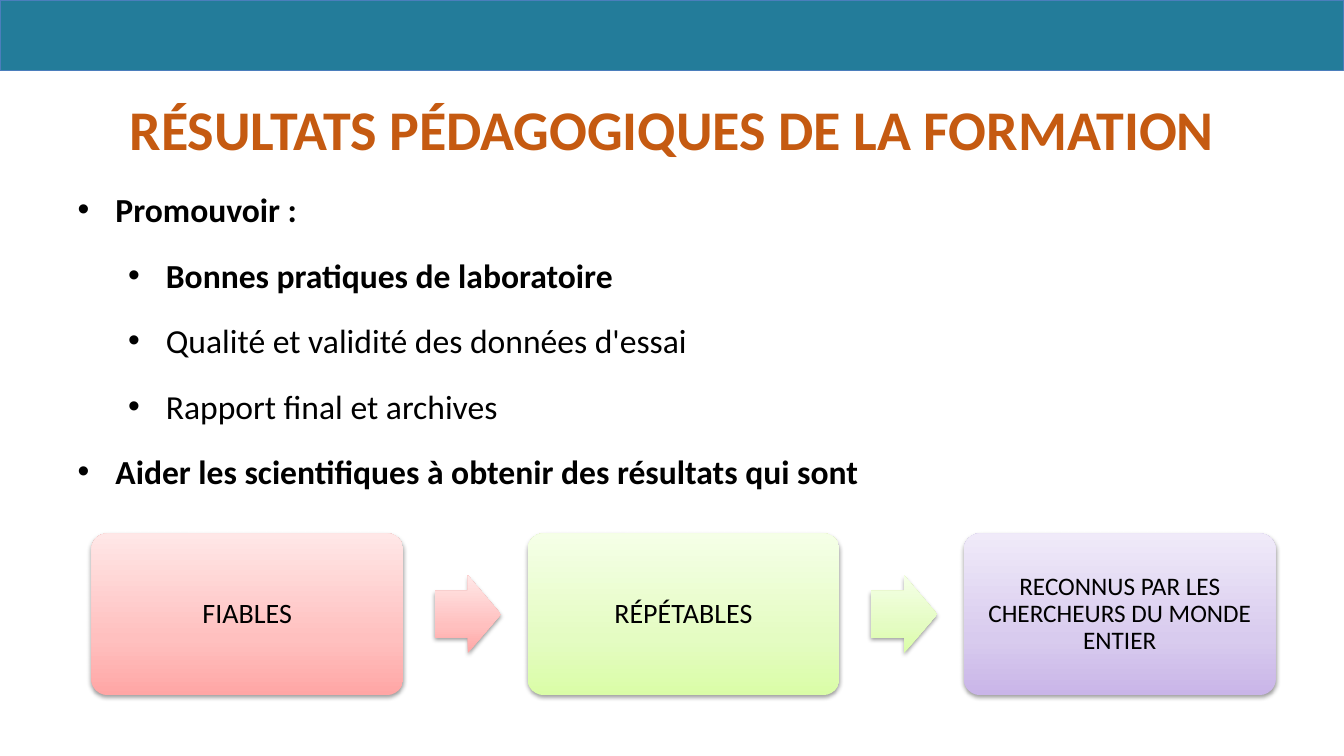
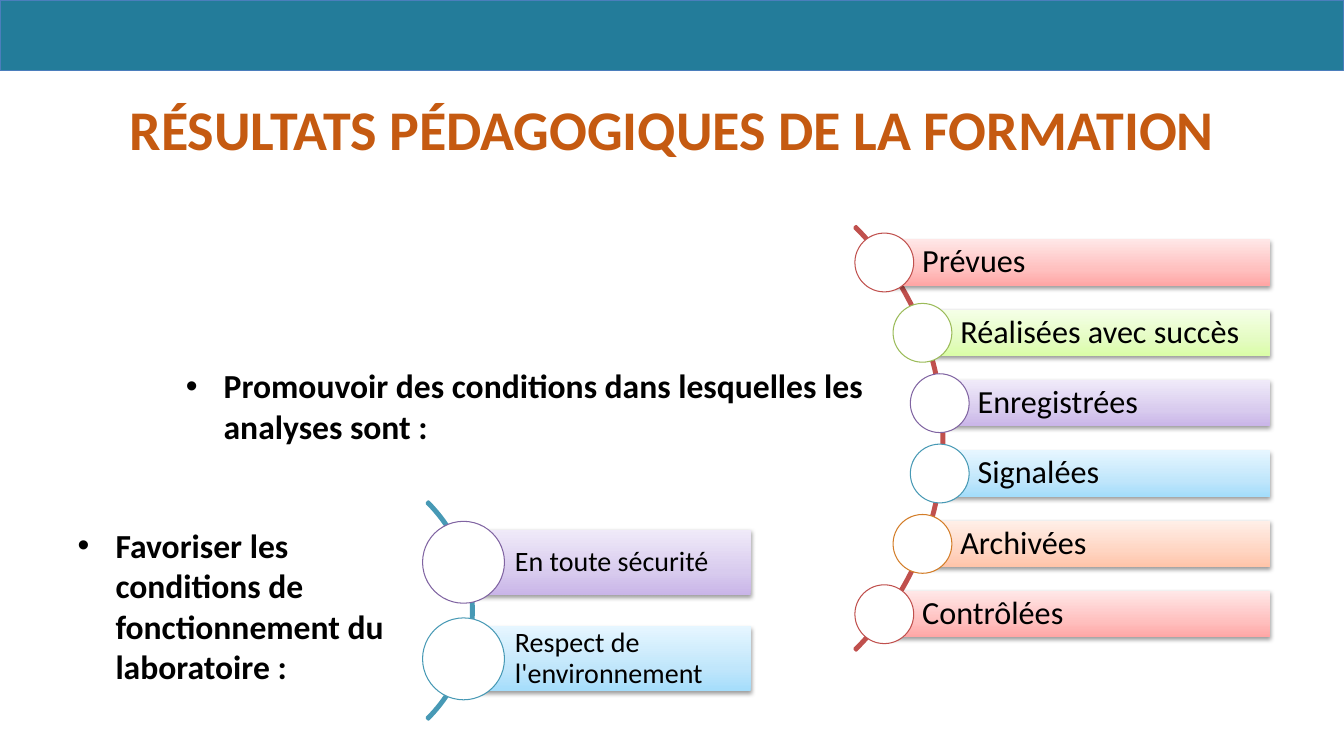
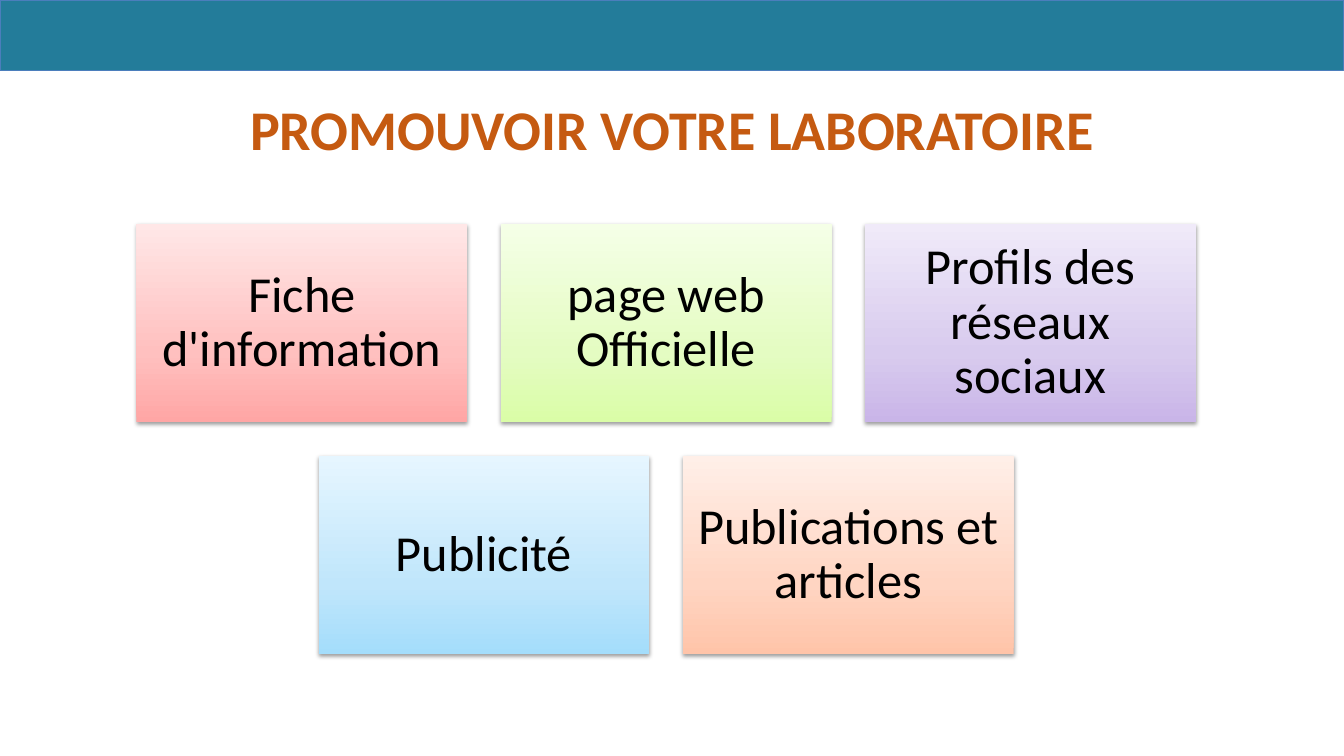
import copy
import math
from dataclasses import dataclass

from lxml import etree
from pptx import Presentation
from pptx import util as u
from pptx.dml.color import RGBColor
from pptx.enum import shapes, text
from pptx.oxml.ns import qn

PX = 9525  # EMU in one px
SHAPE = shapes.MSO_SHAPE
ALIGN = text.PP_ALIGN
ANCHOR = text.MSO_ANCHOR


@dataclass(frozen=True)
class Tone:
    line: str
    gradient: tuple  # colours from bottom to top


@dataclass(frozen=True)
class Theme:
    font: str = "Calibri"
    ink: str = "000000"
    paper: str = "FFFFFF"
    title: str = "C55A11"
    band: str = "237C9A"
    band_line: str = "4B7EBC"
    red: Tone = Tone("C0504D", ("FFA6A5", "FFC0BF", "FFE7E7"))
    green: Tone = Tone("9BBB59", ("DAFDA7", "E4FCC2", "F5FFE7"))
    purple: Tone = Tone("8064A2", ("C9B5E8", "D8CBEE", "F0EAF9"))
    blue: Tone = Tone("4799B5", ("A4DDFB", "C0E6FB", "E6F6FF"))
    orange: Tone = Tone("D37D28", ("FFC4A9", "FFD5C2", "FFEFE8"))
    gradient_stops: tuple = (0, 0.35, 1)
    title_size: int = 40
    body_size: int = 24
    card_size: int = 20
    small_card_size: int = 18
    condition_size: int = 23
    tile_size: int = 36
    thin_line: float = 0.75
    arc_line: int = 2


THEME = Theme()


def px(value):
    return u.Emu(round(value * PX))


def rgb(colour):
    return RGBColor.from_string(colour)


# Basic parts

def set_frame(frame, insets, anchor=ANCHOR.TOP):
    frame.word_wrap = True
    frame.vertical_anchor = anchor
    (frame.margin_left, frame.margin_top,
     frame.margin_right, frame.margin_bottom) = map(px, insets)


def set_font(paragraph, size, colour=THEME.ink, bold=False):
    font = paragraph.font
    font.name, font.size, font.bold = THEME.font, u.Pt(size), bold
    font.color.rgb = rgb(colour)


def add_plain(slide, kind, box, fill=None, line=None, width=THEME.thin_line):
    shape = slide.shapes.add_shape(kind, *map(px, box))
    shape.shadow.inherit = False
    if fill:
        shape.fill.solid()
        shape.fill.fore_color.rgb = rgb(fill)
    else:
        shape.fill.background()
    if line:
        shape.line.color.rgb = rgb(line)
        shape.line.width = u.Pt(width)
    else:
        shape.line.fill.background()
    return shape


def add_shaded(slide, kind, box, tone):
    """Borderless shape with a vertical gradient and a soft shadow."""
    shape = add_plain(slide, kind, box)
    fill = shape.fill
    fill.gradient()
    fill.gradient_angle = 90
    properties = shape.element.spPr
    stops = properties.find(".//" + qn("a:gsLst"))
    stops.append(copy.deepcopy(stops[0]))
    for stop, position, colour in zip(fill.gradient_stops, THEME.gradient_stops, tone.gradient):
        stop.position = position
        stop.color.rgb = rgb(colour)
    shadow = etree.SubElement(properties.find(qn("a:effectLst")), qn("a:outerShdw"),
                              blurRad="40000", dist="20000", dir="5400000", rotWithShape="0")
    colour = etree.SubElement(shadow, qn("a:srgbClr"), val="000000")
    etree.SubElement(colour, qn("a:alpha"), val="38000")
    return shape


def add_label(shape, label, size, insets, align=ALIGN.CENTER):
    set_frame(shape.text_frame, insets, ANCHOR.MIDDLE)
    paragraph = shape.text_frame.paragraphs[0]
    paragraph.text = label
    paragraph.alignment = align
    paragraph.line_spacing = 0.9
    set_font(paragraph, size)


def add_text_box(slide, box):
    frame = slide.shapes.add_textbox(*map(px, box)).text_frame
    set_frame(frame, (10, 5, 10, 0))
    return frame


# Regions

def add_titled_slide(presentation, title):
    slide = presentation.slides.add_slide(presentation.slide_layouts[6])
    add_plain(slide, SHAPE.RECTANGLE, (0, 0, 1280, 67), THEME.band, THEME.band_line)
    paragraph = add_text_box(slide, (64, 85, 1152, 62)).paragraphs[0]
    paragraph.text = title
    paragraph.alignment = ALIGN.CENTER
    set_font(paragraph, THEME.title_size, THEME.title, bold=True)
    return slide


def add_bullets(slide, box, items):
    """Items are (level, bold, wording)."""
    frame = add_text_box(slide, box)
    for index, (level, bold, wording) in enumerate(items):
        paragraph = frame.add_paragraph() if index else frame.paragraphs[0]
        paragraph.text = wording
        paragraph.level = level
        properties = paragraph._p.get_or_add_pPr()
        properties.set("marL", str(px(36 + 48 * level)))
        properties.set("indent", str(px(-36)))
        etree.SubElement(properties, qn("a:buFont"), typeface="Arial")
        etree.SubElement(properties, qn("a:buChar"), char="•")
        if index:
            paragraph.space_before = u.Pt(18)
        set_font(paragraph, THEME.body_size, bold=bold)


def add_flow(slide, box, cards):
    """Row of cards, each joined to the next by an arrow of its own tone."""
    left, top, width, height = box
    card_width, arrow_width, arrow_height, arrow_offset = 297, 63, 74, 30
    pitch = (width - card_width) / (len(cards) - 1)
    for index, (label, tone, size) in enumerate(cards):
        x = left + index * pitch
        card = add_shaded(slide, SHAPE.ROUNDED_RECTANGLE, (x, top, card_width, height), tone)
        card.adjustments[0] = 0.1
        add_label(card, label, size, (8, 8, 8, 8))
        if index < len(cards) - 1:
            arrow_box = (x + card_width + arrow_offset, top + (height - arrow_height) / 2,
                         arrow_width, arrow_height)
            arrow = add_shaded(slide, SHAPE.RIGHT_ARROW, arrow_box, tone)
            arrow.adjustments[0], arrow.adjustments[1] = 0.6, 0.5


def add_fan(slide, arc_box, right, rows, pitch, bar_height, circle, inset, size, arc_colour):
    """Bars that start on a quarter arc, with a circle at each start."""
    left, top, diameter = arc_box
    thickness = 2
    arc = add_plain(slide, SHAPE.BLOCK_ARC, (left, top, diameter, diameter),
                    line=arc_colour, width=THEME.arc_line)
    for index, value in enumerate((189, 27, thickness / diameter)):
        arc.adjustments[index] = value
    centre_x, centre_y = left + diameter / 2, top + diameter / 2
    radius = diameter / 2 - thickness
    for index, (label, tone) in enumerate(rows):
        rise = (index - (len(rows) - 1) / 2) * pitch
        x, y = centre_x + math.sqrt(radius ** 2 - rise ** 2), centre_y + rise
        bar = add_shaded(slide, SHAPE.RECTANGLE,
                         (x, y - bar_height / 2, right - x, bar_height), tone)
        add_label(bar, label, size, (inset, 6, 6, 6), ALIGN.LEFT)
        add_plain(slide, SHAPE.OVAL, (x - circle / 2, y - circle / 2, circle, circle),
                  THEME.paper, tone.line)


def add_tiles(slide, box, rows):
    """Rows of equal tiles, each row centred in the box."""
    left, top, width = box
    tile_width, tile_height, gap = 315, 189, 32
    for row_index, row in enumerate(rows):
        row_width = len(row) * (tile_width + gap) - gap
        start = left + (width - row_width) / 2
        y = top + row_index * (tile_height + gap)
        for index, (label, tone) in enumerate(row):
            tile_box = (start + index * (tile_width + gap), y, tile_width, tile_height)
            tile = add_shaded(slide, SHAPE.RECTANGLE, tile_box, tone)
            add_label(tile, label, THEME.tile_size, (14, 14, 14, 14))


# Slides

OUTCOMES_TITLE = "RÉSULTATS PÉDAGOGIQUES DE LA FORMATION"


def build_outcomes(presentation):
    slide = add_titled_slide(presentation, OUTCOMES_TITLE)
    add_bullets(slide, (64, 175, 1130, 460), [
        (0, True, "Promouvoir :"),
        (1, True, "Bonnes pratiques de laboratoire"),
        (1, False, "Qualité et validité des données d'essai"),
        (1, False, "Rapport final et archives"),
        (0, True, "Aider les scientifiques à obtenir des résultats qui sont"),
    ])
    add_flow(slide, (87, 508, 1128, 154), [
        ("FIABLES", THEME.red, THEME.card_size),
        ("RÉPÉTABLES", THEME.green, THEME.card_size),
        ("RECONNUS PAR LES CHERCHEURS DU MONDE ENTIER", THEME.purple, THEME.small_card_size),
    ])


def build_conditions(presentation):
    slide = add_titled_slide(presentation, OUTCOMES_TITLE)
    add_bullets(slide, (167, 343, 702, 75), [
        (0, True, "Promouvoir des conditions dans lesquelles les analyses sont :"),
    ])
    add_fan(slide, (328, 132, 571), right=1210, pitch=67, bar_height=44, circle=56,
            inset=36, size=THEME.condition_size, arc_colour=THEME.red.line, rows=[
                ("Prévues", THEME.red),
                ("Réalisées avec succès", THEME.green),
                ("Enregistrées", THEME.purple),
                ("Signalées", THEME.blue),
                ("Archivées", THEME.orange),
                ("Contrôlées", THEME.red),
            ])
    add_bullets(slide, (64, 495, 365, 139), [
        (0, True, "Favoriser les conditions de fonctionnement du laboratoire :"),
    ])
    add_fan(slide, (158, 435, 293), right=715, pitch=92, bar_height=62, circle=78,
            inset=49, size=THEME.card_size, arc_colour=THEME.blue.line, rows=[
                ("En toute sécurité", THEME.purple),
                ("Respect de l'environnement", THEME.blue),
            ])


def build_promotion(presentation):
    slide = add_titled_slide(presentation, "PROMOUVOIR VOTRE LABORATOIRE")
    add_tiles(slide, (130, 213, 1009), [
        [("Fiche d'information", THEME.red),
         ("page web Officielle", THEME.green),
         ("Profils des réseaux sociaux", THEME.purple)],
        [("Publicité", THEME.blue),
         ("Publications et articles", THEME.orange)],
    ])


def main():
    presentation = Presentation()
    presentation.slide_width, presentation.slide_height = px(1280), px(720)
    for build in (build_outcomes, build_conditions, build_promotion):
        build(presentation)
    presentation.save("out.pptx")


if __name__ == "__main__":
    main()
